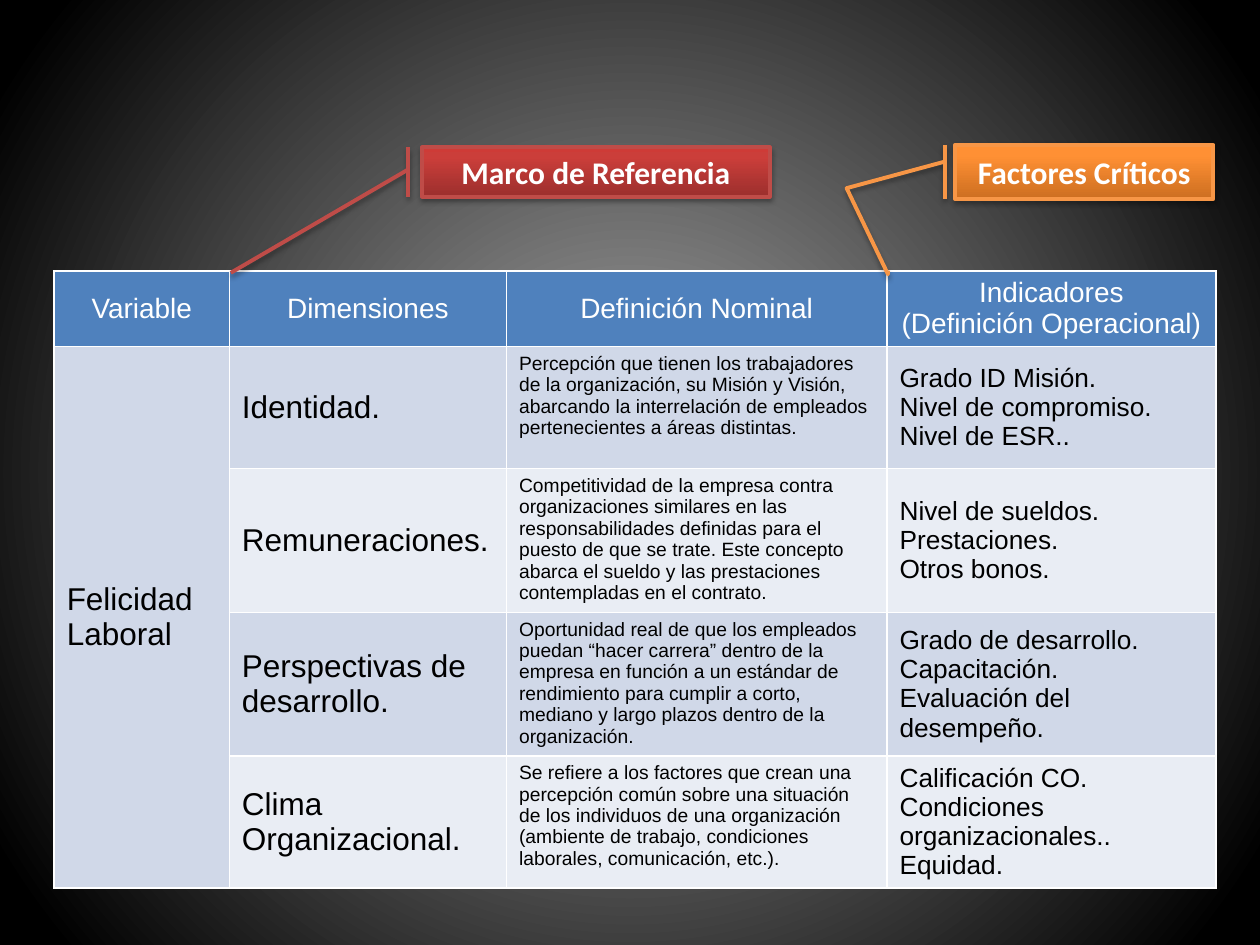
"""Build the slide with the table of workplace happiness dimensions."""
from lxml.etree import SubElement
from pptx import Presentation
from pptx.dml.color import RGBColor
from pptx.enum.shapes import MSO_SHAPE
from pptx.enum.text import MSO_ANCHOR, PP_ALIGN
from pptx.oxml.ns import qn
from pptx.util import Inches, Pt

WHITE = RGBColor(0xFF, 0xFF, 0xFF)
BLACK = RGBColor(0x00, 0x00, 0x00)
GRAY = RGBColor(0xA6, 0xA6, 0xA6)
HEADER_BLUE = RGBColor(0x4F, 0x81, 0xBD)
BAND_DARK = RGBColor(0xD0, 0xD8, 0xE8)
BAND_LIGHT = RGBColor(0xE9, 0xED, 0xF4)
RED_LINE = RGBColor(0xBF, 0x4C, 0x48)
RED_STOPS = [(0, RGBColor(0x9C, 0x2F, 0x2D)), (80, RGBColor(0xCB, 0x3E, 0x3A)),
             (100, RGBColor(0xCE, 0x3B, 0x37))]
ORANGE_LINE = RGBColor(0xF7, 0x96, 0x46)
ORANGE_STOPS = [(0, RGBColor(0xCC, 0x6E, 0x20)), (80, RGBColor(0xFF, 0x90, 0x34)),
                (100, RGBColor(0xFF, 0x91, 0x36))]

COLUMN_WIDTHS = [1.39, 2.2, 3.02, 2.61]
ROW_HEIGHTS = [0.6, 0.97, 1.14, 1.14, 1.05]
BODY_SIZES = [18, 18, 11, 15]
HEADERS = [["Variable"], ["Dimensiones"], ["Definición Nominal"],
           ["Indicadores", "(Definición Operacional)"]]
VARIABLE = "Felicidad Laboral"
DIMENSIONS = [
    ("Identidad.",
     "Percepción que tienen los trabajadores de la organización, su Misión y Visión, "
     "abarcando la interrelación de empleados pertenecientes a áreas distintas.",
     ["Grado ID Misión.", "Nivel de compromiso.", "Nivel de ESR.."]),
    ("Remuneraciones.",
     "Competitividad de la empresa contra organizaciones similares en las "
     "responsabilidades definidas para el puesto de que se trate. Este concepto abarca "
     "el sueldo y las prestaciones contempladas en el contrato.",
     ["Nivel de sueldos.", "Prestaciones.", "Otros bonos."]),
    ("Perspectivas de desarrollo.",
     "Oportunidad real de que los empleados puedan “hacer carrera” dentro de la empresa "
     "en función a un estándar de rendimiento para cumplir a corto, mediano y largo "
     "plazos dentro de la organización.",
     ["Grado de desarrollo.", "Capacitación.", "Evaluación del desempeño."]),
    ("Clima Organizacional.",
     "Se refiere a los factores que crean una percepción común sobre una situación de "
     "los individuos de una organización (ambiente de trabajo, condiciones laborales, "
     "comunicación, etc.).",
     ["Calificación CO.", "Condiciones organizacionales..", "Equidad."]),
]


def set_gradient(fill, owner, stops, radial=False):
    """Fill with a radial gradient or one that rises from the bottom."""
    fill.gradient()
    gradient = owner.element.xpath(".//a:gradFill")[0]
    for child in list(gradient):
        gradient.remove(child)
    stop_list = SubElement(gradient, qn("a:gsLst"))
    for position, color in stops:
        stop = SubElement(stop_list, qn("a:gs"), pos=str(position * 1000))
        SubElement(stop, qn("a:srgbClr"), val=str(color))
    if radial:
        shade = SubElement(gradient, qn("a:path"), path="circle")
        SubElement(shade, qn("a:fillToRect"), dict.fromkeys("ltrb", "50000"))
    else:
        SubElement(gradient, qn("a:lin"), ang="16200000", scaled="0")


def add_shadow(shape):
    """Give the shape a soft shadow below it."""
    shape.shadow.inherit = False
    effects = shape.element.spPr.find(qn("a:effectLst"))
    shadow = SubElement(effects, qn("a:outerShdw"), blurRad=str(Pt(3.1)),
                        dist=str(Pt(1.8)), dir="5400000", rotWithShape="0")
    color = SubElement(shadow, qn("a:srgbClr"), val=str(BLACK))
    SubElement(color, qn("a:alpha"), val="35000")


def write_paragraphs(frame, lines, size, color, font_name, alignment, bold=False):
    """Write each line as a paragraph of one run."""
    for index, line in enumerate(lines):
        paragraph = frame.add_paragraph() if index else frame.paragraphs[0]
        paragraph.alignment = alignment
        run = paragraph.add_run()
        run.text = line
        run.font.size = Pt(size)
        run.font.name = font_name
        run.font.bold = bold
        run.font.color.rgb = color


def add_callout(slide, kind, box, adjustments, stops, line_color, text):
    """Add a callout whose leader points at the table."""
    shape = slide.shapes.add_shape(kind, *map(Inches, box))
    for index, value in enumerate(adjustments):
        shape.adjustments[index] = value
    set_gradient(shape.fill, shape, stops)
    shape.line.color.rgb = line_color
    shape.line.width = Pt(2.25)
    add_shadow(shape)
    shape.text_frame.vertical_anchor = MSO_ANCHOR.MIDDLE
    write_paragraphs(shape.text_frame, [text], 18, WHITE, "Calibri",
                     PP_ALIGN.CENTER, bold=True)


def fill_cell(cell, lines, size, color, fill_color, alignment, anchor):
    """Fill a table cell and write its lines."""
    cell.fill.solid()
    cell.fill.fore_color.rgb = fill_color
    cell.vertical_anchor = anchor
    write_paragraphs(cell.text_frame, lines, size, color, "Arial", alignment)


def add_dimension_table(slide):
    """Add the table of dimensions, definitions and indicators."""
    table = slide.shapes.add_table(
        len(ROW_HEIGHTS), len(COLUMN_WIDTHS), Inches(0.43), Inches(2.15),
        Inches(sum(COLUMN_WIDTHS)), Inches(sum(ROW_HEIGHTS))).table
    for column, width in zip(table.columns, COLUMN_WIDTHS):
        column.width = Inches(width)
    for row, height in zip(table.rows, ROW_HEIGHTS):
        row.height = Inches(height)
    for index, lines in enumerate(HEADERS):
        fill_cell(table.cell(0, index), lines, 16, WHITE, HEADER_BLUE,
                  PP_ALIGN.CENTER, MSO_ANCHOR.MIDDLE)
    table.cell(1, 0).merge(table.cell(len(DIMENSIONS), 0))
    for row, (name, definition, indicators) in enumerate(DIMENSIONS, 1):
        band = BAND_DARK if row % 2 else BAND_LIGHT
        variable = [VARIABLE] if row == 1 else []
        contents = [variable, [name], [definition], indicators]
        for column, (lines, size) in enumerate(zip(contents, BODY_SIZES)):
            anchor = MSO_ANCHOR.TOP if column == 2 else MSO_ANCHOR.MIDDLE
            fill_cell(table.cell(row, column), lines, size, BLACK, band,
                      PP_ALIGN.LEFT, anchor)


def main():
    """Build and save the presentation."""
    presentation = Presentation()
    presentation.slide_width = Inches(10)
    presentation.slide_height = Inches(7.5)
    slide = presentation.slides.add_slide(presentation.slide_layouts[6])
    set_gradient(slide.background.fill, slide, [(2, GRAY), (94, BLACK)], radial=True)
    add_dimension_table(slide)
    add_callout(slide, MSO_SHAPE.LINE_CALLOUT_1_BORDER_AND_ACCENT_BAR,
                (3.35, 1.17, 2.76, 0.39), (0.45, -0.04, 2.55, -0.55),
                RED_STOPS, RED_LINE, "Marco de Referencia")
    add_callout(slide, MSO_SHAPE.LINE_CALLOUT_3_BORDER_AND_ACCENT_BAR,
                (7.58, 1.15, 2.05, 0.43),
                (0.31, -0.04, 0.8, -0.42, 2.39, -0.26, 2.32, -0.26),
                ORANGE_STOPS, ORANGE_LINE, "Factores Críticos")
    presentation.save("out.pptx")


if __name__ == "__main__":
    main()
